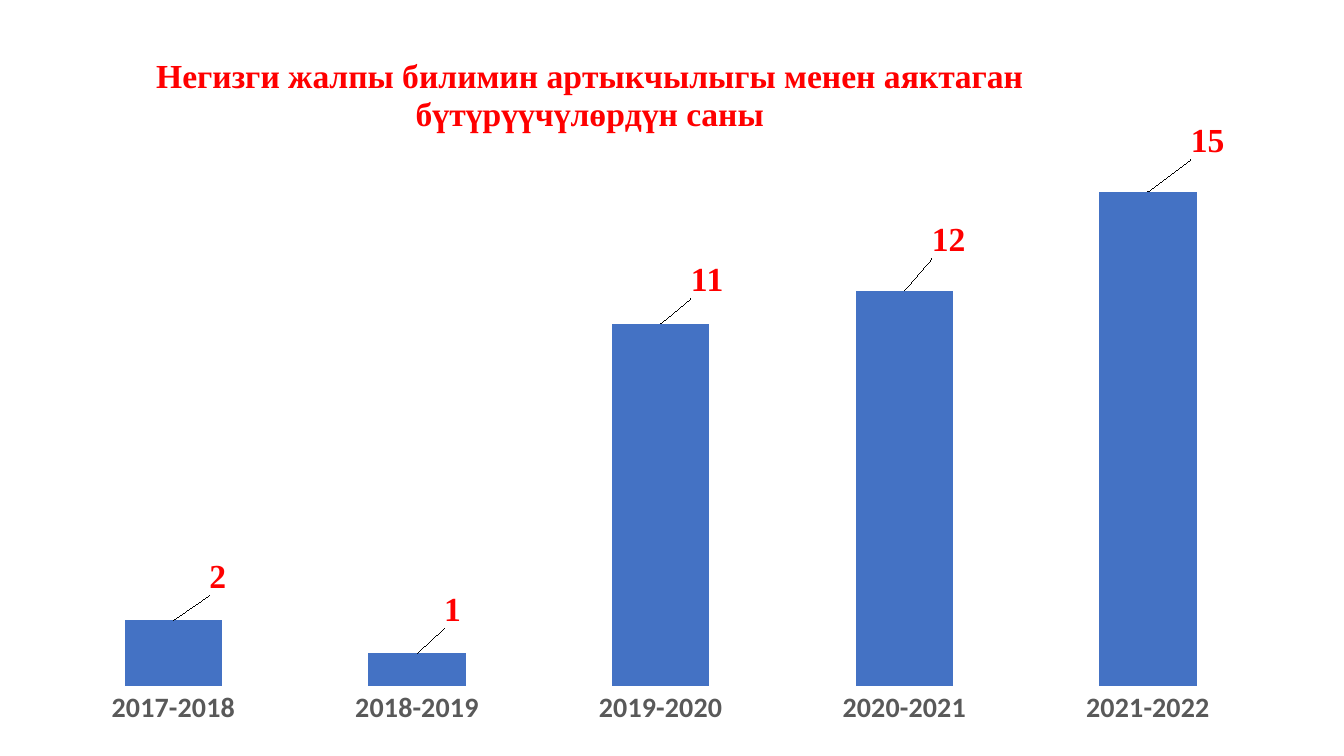
from lxml import etree
from pptx import Presentation
from pptx.chart.data import CategoryChartData
from pptx.dml.color import RGBColor
from pptx.enum.chart import XL_CHART_TYPE, XL_LABEL_POSITION, XL_TICK_MARK
from pptx.enum.text import PP_ALIGN
from pptx.oxml.ns import qn
from pptx.util import Cm, Pt

COLUMNS = XL_CHART_TYPE.COLUMN_CLUSTERED
OUTSIDE_END = XL_LABEL_POSITION.OUTSIDE_END
NO_TICK = XL_TICK_MARK.NONE
CENTER = PP_ALIGN.CENTER
COLORS = {"bar": "4472C4", "accent": "FF0000", "axis": "595959", "base": "000000"}

# Graduates per school year, and how far each label is moved (x, y share of chart)
GRADUATES = {
    "2017-2018": (2, 0.035, -0.03),
    "2018-2019": (1, 0.028, -0.03),
    "2019-2020": (11, 0.037, -0.03),
    "2020-2021": (12, 0.035, -0.04),
    "2021-2022": (15, 0.047, -0.04),
}
TITLE_LINES = [
    "Негизги жалпы билимин артыкчылыгы менен аяктаган",
    "бүтүрүүчүлөрдүн саны",
]


def set_font(font, color, **values):
    for name, value in values.items():
        setattr(font, name, value)
    font.color.rgb = RGBColor.from_string(COLORS[color])


def set_layout(parent, index, **values):
    """Give a chart part a manual layout as its child at index."""
    for old in parent.findall(qn("c:layout")):
        parent.remove(old)
    layout = etree.Element(qn("c:layout"))
    manual = etree.SubElement(layout, qn("c:manualLayout"))
    for name, value in values.items():
        etree.SubElement(manual, qn(f"c:{name}")).set("val", str(value))
    parent.insert(index, layout)


deck = Presentation()
deck.slide_width, deck.slide_height = Cm(33.87), Cm(19.05)
page = deck.slides.add_slide(deck.slide_layouts[6])

# Column chart
data = CategoryChartData()
data.categories = list(GRADUATES)
data.add_series("Series 1", [row[0] for row in GRADUATES.values()])
chart = page.shapes.add_chart(
    COLUMNS, Cm(0.66), Cm(0.99), Cm(31.98), Cm(17.63), data
).chart
chart.has_legend = False
set_font(chart.font, "base", name="Calibri", size=Pt(10))
chart_root = chart.element if hasattr(chart, "element") else chart._chartSpace

# Title
chart.has_title = True
title_frame = chart.chart_title.text_frame
for number, line in enumerate(TITLE_LINES):
    para = title_frame.add_paragraph() if number else title_frame.paragraphs[0]
    para.alignment = CENTER
    span = para.add_run()
    span.text = line
    set_font(span.font, "accent", name="Times New Roman", size=Pt(24), bold=True)
title = chart_root.find(f".//{qn('c:title')}")
set_layout(title, 1, xMode="edge", yMode="edge", x=0.1, y=0.02)

# Axes
years = chart.category_axis
years.major_tick_mark = NO_TICK
years.format.line.fill.background()
set_font(years.tick_labels.font, "axis", name="Calibri", size=Pt(20), bold=True)
counts = chart.value_axis
counts.minimum_scale, counts.maximum_scale = 0, 16
counts.has_major_gridlines = False
counts.visible = False

# Bars
plot = chart.plots[0]
plot.gap_width = 150
plot.vary_by_categories = False
bars = plot.series[0]
bars.format.fill.solid()
bars.format.fill.fore_color.rgb = RGBColor.from_string(COLORS["bar"])
plot_area = chart_root.find(f".//{qn('c:plotArea')}")
set_layout(plot_area, 0, layoutTarget="inner", xMode="edge", yMode="edge",
           x=0.02, y=0.171, w=0.96, h=0.754)

# Value labels, moved up and to the right of the bars
for number in range(len(GRADUATES)):
    label = bars.points[number].data_label
    set_font(label.font, "accent", name="Times New Roman", size=Pt(24), bold=True)
    label.position = OUTSIDE_END
label_nodes = chart_root.findall(f".//{qn('c:dLbl')}")
for node, (_, shift_x, shift_y) in zip(label_nodes, GRADUATES.values()):
    set_layout(node, 1, x=shift_x, y=shift_y)

deck.save("out.pptx")
